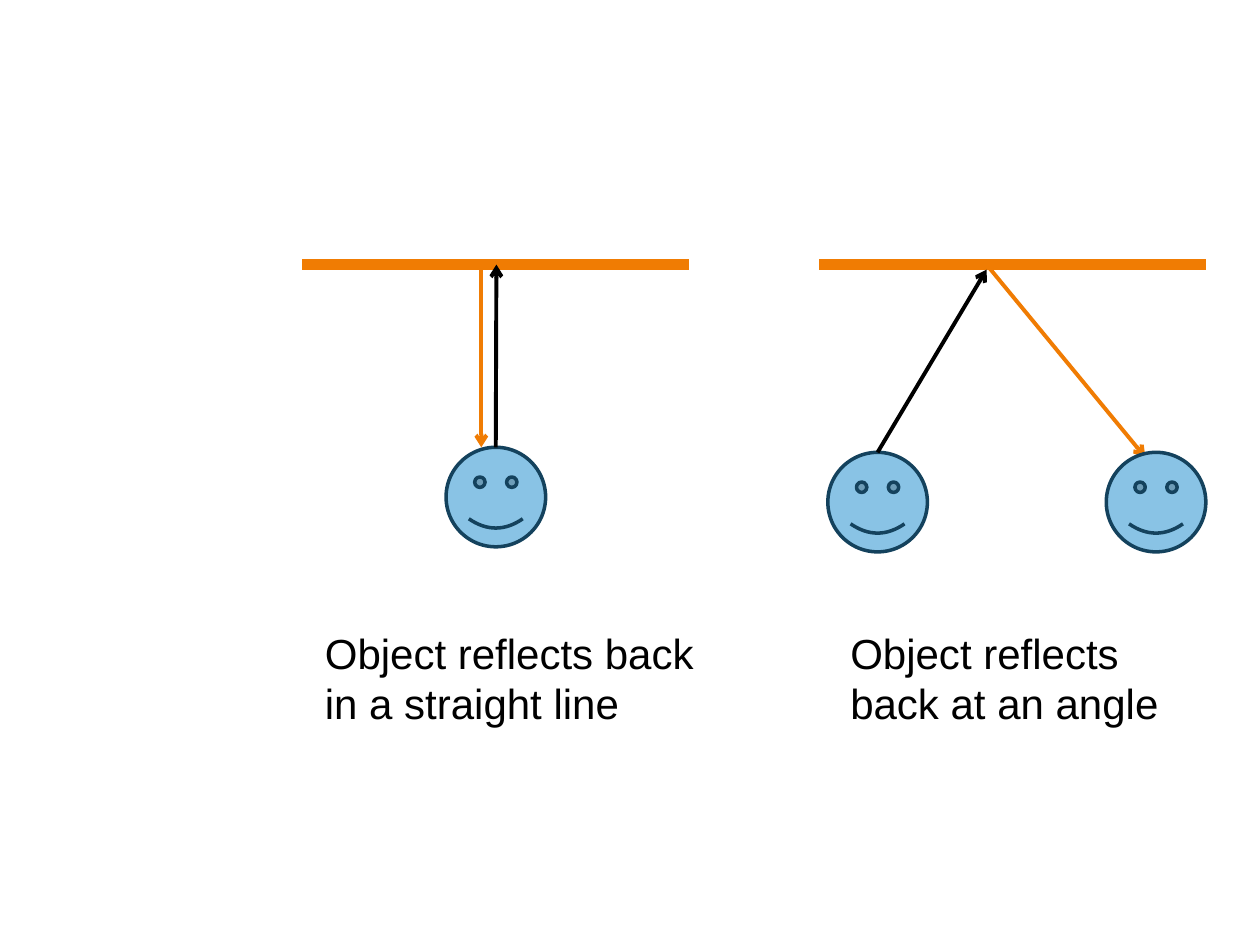
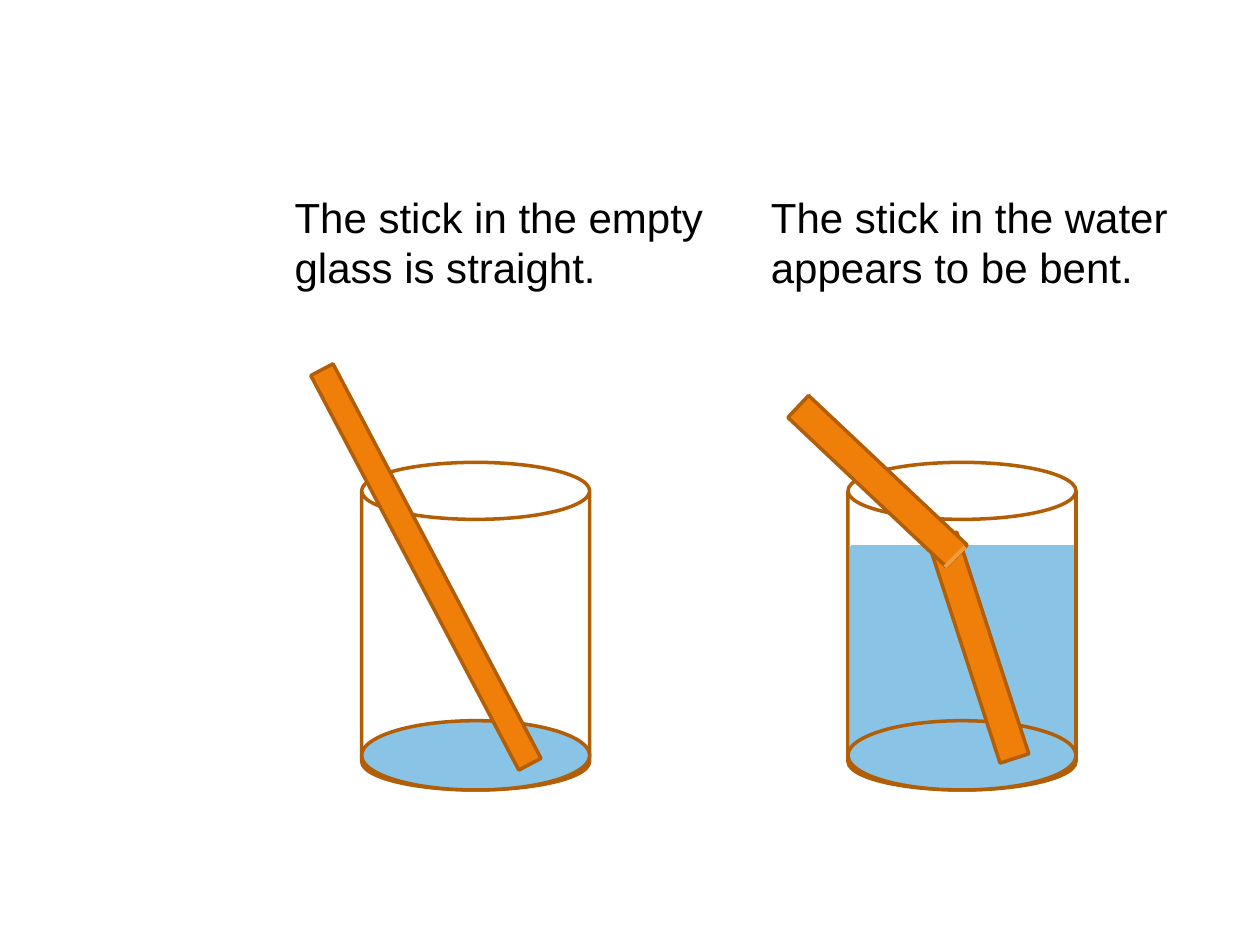
from dataclasses import dataclass
from typing import Optional

from pptx import Presentation
from pptx.dml.color import RGBColor
from pptx.enum.shapes import MSO_CONNECTOR, MSO_SHAPE
from pptx.enum.text import MSO_AUTO_SIZE
from pptx.oxml.ns import qn
from pptx.util import Inches, Pt
from lxml import etree

STRAIGHT = MSO_CONNECTOR.STRAIGHT
FACE, CAN = MSO_SHAPE.SMILEY_FACE, MSO_SHAPE.CAN
OVAL, RECT = MSO_SHAPE.OVAL, MSO_SHAPE.RECTANGLE
FIT_TEXT = MSO_AUTO_SIZE.SHAPE_TO_FIT_TEXT

FONT = "Arial"
BLACK, ORANGE, BLUE, NAVY = "000000", "F07C03", "89C3E5", "14425D"
STICK, BROWN, HIGHLIGHT = "F07F09", "B25E07", "F19B3D"
WIDTH, HEIGHT = Inches(10), Inches(7.5)
COLUMNS, ROWS = 100, 75
BLANK_LAYOUT, TOP_SIDE = 6, 0

MIRROR_Y, MIRROR_SPAN = 21, 30.7
FACE_SIZE = 7.9
GLASS_TOP, GLASS_W, GLASS_H, BASE_H = 36.7, 18.1, 26, 5.5
EMPTY_X, WATER_X = 28.7, 67.3


@dataclass
class Figure:
    kind: int
    x: float
    y: float
    w: float
    h: float
    fill: Optional[str]
    line: str
    angle: float = 0


@dataclass
class Ray:
    x1: float
    y1: float
    x2: float
    y2: float
    color: str
    width: float = 2.25
    arrow: bool = True


@dataclass
class Caption:
    x: float
    y: float
    w: float
    text: str


def rgb(value: str) -> RGBColor:
    return RGBColor.from_string(value)


def col(n: float) -> int:
    return round(WIDTH * n / COLUMNS)


def row(n: float) -> int:
    return round(HEIGHT * n / ROWS)


def add_figure(s, figure: Figure):
    sp = s.shapes.add_shape(figure.kind, col(figure.x), row(figure.y),
                            col(figure.w), row(figure.h))
    sp.shadow.inherit = False
    sp.rotation = figure.angle
    if figure.fill:
        sp.fill.solid()
        sp.fill.fore_color.rgb = rgb(figure.fill)
    else:
        sp.fill.background()
    sp.line.color.rgb = rgb(figure.line)
    sp.line.width = Pt(2)
    return sp


def add_ray(s, ray: Ray, source=None) -> None:
    cxn = s.shapes.add_connector(STRAIGHT, col(ray.x1), row(ray.y1),
                                 col(ray.x2), row(ray.y2))
    if source is not None:
        cxn.begin_connect(source, TOP_SIDE)
    cxn.line.color.rgb = rgb(ray.color)
    cxn.line.width = Pt(ray.width)
    if ray.arrow:
        ln = cxn.line._get_or_add_ln()
        etree.SubElement(ln, qn("a:tailEnd"), type="arrow")
    etree.SubElement(cxn._element.spPr, qn("a:effectLst"))


def add_caption(s, caption: Caption) -> None:
    tf = s.shapes.add_textbox(col(caption.x), row(caption.y),
                              col(caption.w), row(9.1)).text_frame
    tf.word_wrap = True
    tf.auto_size = FIT_TEXT
    p = tf.paragraphs[0]
    p.text = caption.text
    p.font.name = FONT
    p.font.size = Pt(24)
    p.font.color.rgb = rgb(BLACK)


def add_mirror(s, x: float) -> None:
    add_ray(s, Ray(x, MIRROR_Y, x + MIRROR_SPAN, MIRROR_Y, ORANGE, 6, False))


def add_face(s, x: float, y: float):
    return add_figure(s, Figure(FACE, x, y, FACE_SIZE, FACE_SIZE, BLUE, NAVY))


def add_glass(s, x: float) -> None:
    base_y = GLASS_TOP + GLASS_H - BASE_H
    add_figure(s, Figure(CAN, x, GLASS_TOP, GLASS_W, GLASS_H, None, BROWN))
    add_figure(s, Figure(OVAL, x, base_y, GLASS_W, BASE_H, BLUE, BROWN))


def add_stick(s, x: float, y: float, w: float, h: float, angle: float) -> None:
    add_figure(s, Figure(RECT, x, y, w, h, STICK, BROWN, angle))


def build_reflection(s) -> None:
    for x in (24, 65):
        add_mirror(s, x)
    face = add_face(s, 35.4, 35.5)
    add_ray(s, Ray(39.4, 35.5, 39.4, MIRROR_Y, BLACK), face)
    add_ray(s, Ray(38.2, MIRROR_Y, 38.2, 35.5, ORANGE))
    face = add_face(s, 65.7, 35.9)
    add_ray(s, Ray(69.8, 35.9, 78.3, 21.4, BLACK), face)
    add_ray(s, Ray(78.3, MIRROR_Y, 90.9, 36.3, ORANGE))
    add_face(s, 87.8, 35.9)
    add_caption(s, Caption(24.8, 49.3, 31.5,
                           "Object reflects back in a straight line"))
    add_caption(s, Caption(66.5, 49.3, 29.9,
                           "Object reflects back at an angle"))


def build_refraction(s) -> None:
    add_figure(s, Figure(RECT, 67.6, 43.4, 17.7, 16.9, BLUE, BLUE))
    for x in (EMPTY_X, WATER_X):
        add_glass(s, x)
    add_stick(s, 16.1, 44, 35.4, 2, 62.2)
    add_stick(s, 68.4, 50.2, 18.5, 2.4, 72)
    add_stick(s, 61, 37, 17.3, 2.4, 43.3)
    add_ray(s, Ray(76.6, 43.4, 75, 45, HIGHLIGHT, arrow=False))
    add_caption(s, Caption(60.2, 14.7, 35.4,
                           "The stick in the water appears to be bent."))
    add_caption(s, Caption(22.4, 14.7, 35.4,
                           "The stick in the empty glass is straight."))


def main() -> None:
    prs = Presentation()
    prs.slide_width, prs.slide_height = WIDTH, HEIGHT
    for build in (build_reflection, build_refraction):
        build(prs.slides.add_slide(prs.slide_layouts[BLANK_LAYOUT]))
    prs.save("out.pptx")


if __name__ == "__main__":
    main()
